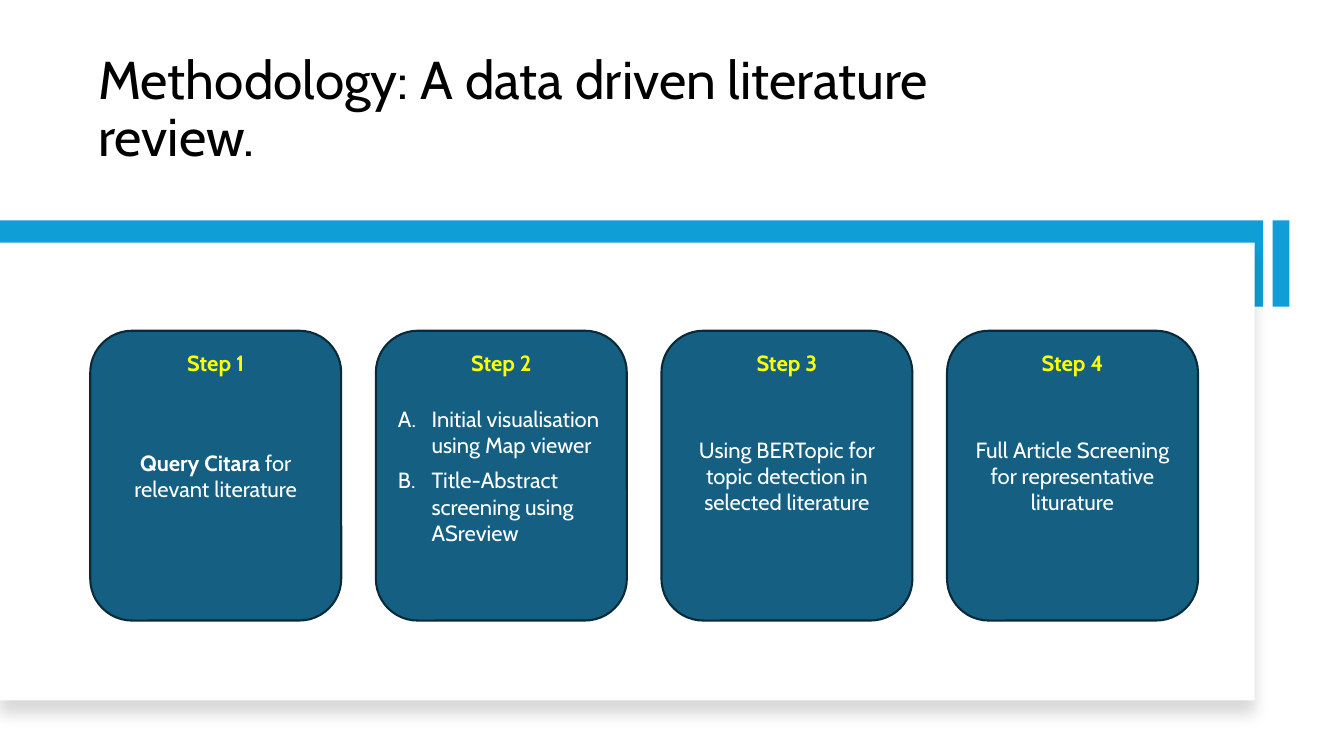
from lxml import etree
from pptx import Presentation
from pptx.dml.color import RGBColor
from pptx.enum.shapes import MSO_SHAPE
from pptx.enum.text import MSO_ANCHOR, PP_ALIGN
from pptx.oxml.ns import qn
from pptx.util import Pt

PX = 9525  # EMU per px, 96 px to the inch
FONT = "Cabin"
BLACK = RGBColor(0x00, 0x00, 0x00)
WHITE = RGBColor(0xFF, 0xFF, 0xFF)
YELLOW = RGBColor(0xFF, 0xFF, 0x00)
BAND_BLUE = RGBColor(0x0F, 0x9E, 0xD5)
CARD_BLUE = RGBColor(0x15, 0x60, 0x82)
CARD_EDGE = RGBColor(0x09, 0x2A, 0x39)
RECT = MSO_SHAPE.RECTANGLE
ROUNDED = MSO_SHAPE.ROUNDED_RECTANGLE
CENTER = PP_ALIGN.CENTER
LEFT = PP_ALIGN.LEFT
MIDDLE = MSO_ANCHOR.MIDDLE
BOTTOM = MSO_ANCHOR.BOTTOM

CARD_SIZE = 15.7
LIST_INDENT = 32

# Each step: paragraphs made of (text, bold) runs, and whether they are lettered
STEPS = [
    ([[("Query Citara", True), (" for relevant literature", False)]], False),
    ([[("Initial visualisation using Map viewer", False)],
      [("Title-Abstract screening using ASreview", False)]], True),
    ([[("Using BERTopic for topic detection in selected literature", False)]], False),
    ([[("Full Article Screening for representative liturature", False)]], False),
]


def emu(*lengths):
    return [length * PX for length in lengths]


def set_font(paragraph, size, color):
    paragraph.font.name = FONT
    paragraph.font.size = Pt(size)
    paragraph.font.color.rgb = color


def add_block(slide, kind, box, fill):
    block = slide.shapes.add_shape(kind, *emu(*box))
    block.fill.solid()
    block.fill.fore_color.rgb = fill
    block.line.fill.background()
    block.shadow.inherit = False
    return block


def add_soft_shadow(block):
    effects = block._element.spPr.find(qn("a:effectLst"))
    shadow = etree.SubElement(effects, qn("a:outerShdw"), blurRad=str(Pt(11)),
                              dist=str(Pt(10)), dir="5400000", algn="t",
                              rotWithShape="0")
    color = etree.SubElement(shadow, qn("a:srgbClr"), val="000000")
    etree.SubElement(color, qn("a:alpha"), val="15000")


def add_lettering(paragraph):
    properties = paragraph._p.get_or_add_pPr()
    properties.set("marL", str(LIST_INDENT * PX))
    properties.set("indent", str(-LIST_INDENT * PX))
    etree.SubElement(properties, qn("a:buFont"), typeface="+mj-lt")
    etree.SubElement(properties, qn("a:buAutoNum"), type="alphaUcPeriod")


def add_title(slide, box):
    frame = slide.shapes.add_textbox(*emu(*box)).text_frame
    frame.word_wrap = True
    frame.vertical_anchor = BOTTOM
    heading = frame.paragraphs[0]
    heading.text = "Methodology: A data driven literature review."
    heading.line_spacing = 0.9
    set_font(heading, 38, BLACK)


def add_backdrop(slide, left, top):
    # Blue band, the separate bar at its right, and the white panel over both
    add_block(slide, RECT, (left + 1212, top, 16, 82), BAND_BLUE)
    add_block(slide, RECT, (left, top, 1203, 82), BAND_BLUE)
    panel = add_block(slide, RECT, (left, top + 21, 1195, 436), WHITE)
    add_soft_shadow(panel)


def add_step_card(slide, box, number, paragraphs, lettered):
    left, top, width, _ = box

    # Card with its description
    card = add_block(slide, ROUNDED, box, CARD_BLUE)
    card.line.color.rgb = CARD_EDGE
    card.line.width = Pt(1.5)
    frame = card.text_frame
    frame.word_wrap = True
    frame.vertical_anchor = MIDDLE
    for index, runs in enumerate(paragraphs):
        description = frame.add_paragraph() if index else frame.paragraphs[0]
        if lettered:
            add_lettering(description)
        description.alignment = LEFT if lettered else CENTER
        description.space_after = Pt(6)
        set_font(description, CARD_SIZE, WHITE)
        for text, bold in runs:
            run = description.add_run()
            run.text = text
            run.font.bold = bold

    # Step label, centred near the top of the card
    label_width = 79
    label_box = (left + (width - label_width) // 2, top + 13, label_width, 35)
    label_frame = slide.shapes.add_textbox(*emu(*label_box)).text_frame
    label_frame.word_wrap = False
    label = label_frame.paragraphs[0]
    label.text = f"Step {number}"
    label.alignment = CENTER
    label.space_after = Pt(6)
    set_font(label, CARD_SIZE, YELLOW)
    label.font.bold = True


def add_steps(slide, left, top):
    width, height, gap = 239, 276, 33
    for index, (paragraphs, lettered) in enumerate(STEPS):
        box = (left + index * (width + gap), top, width, height)
        add_step_card(slide, box, index + 1, paragraphs, lettered)


def main():
    deck = Presentation()
    deck.slide_width, deck.slide_height = emu(1280, 720)
    slide = deck.slides.add_slide(deck.slide_layouts[6])
    add_title(slide, (84, 40, 970, 125))
    add_backdrop(slide, 0, 210)
    add_steps(slide, 86, 315)
    deck.save("out.pptx")


if __name__ == "__main__":
    main()
